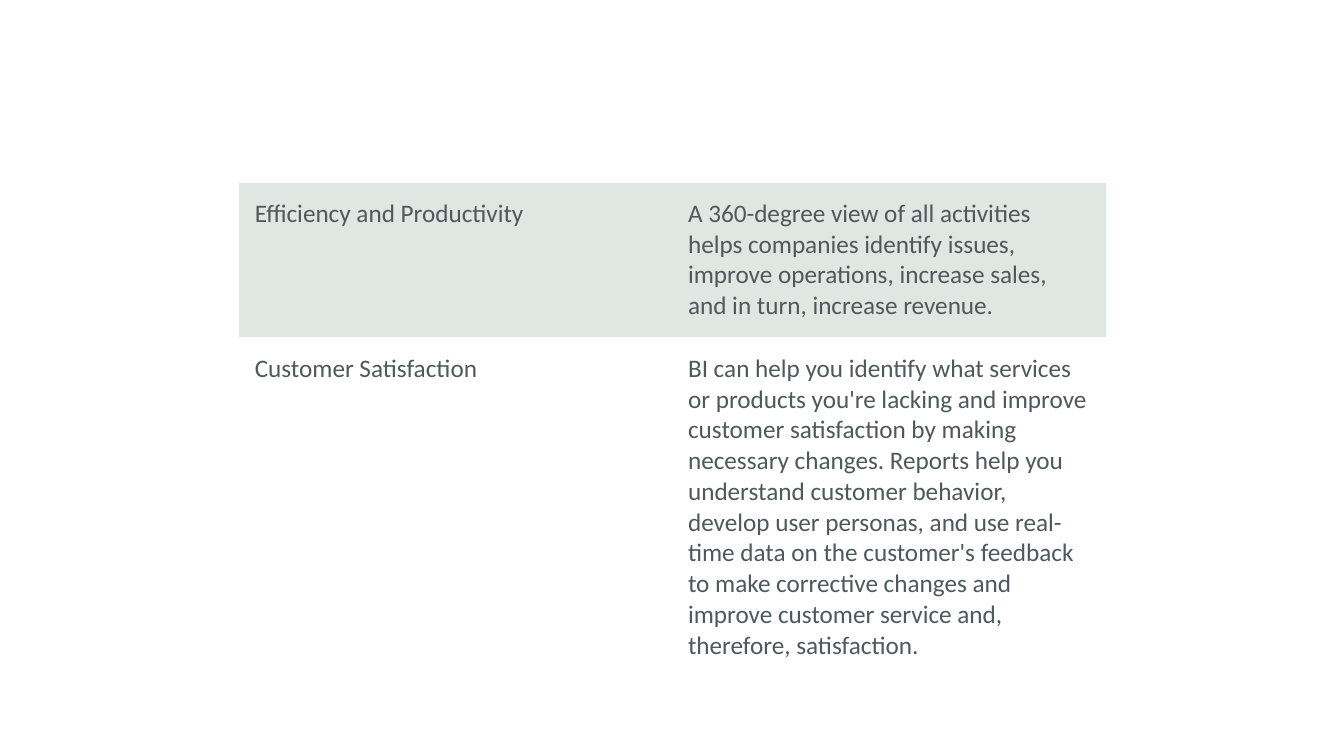
"""Build a slide with a two-row table of business intelligence benefits."""
from dataclasses import dataclass

from lxml.etree import SubElement
from pptx import Presentation
from pptx.dml.color import RGBColor
from pptx.oxml.ns import qn
from pptx.util import Cm, Pt


@dataclass(frozen=True)
class Theme:
    """Colours and type of the slide."""
    font: str = "Calibri"
    body_size: int = 18
    text: str = "4F585B"
    bands: tuple = ("DFE7E3", "FFFFFF")


THEME = Theme()

BENEFITS = [
    ("Efficiency and Productivity",
     "A 360-degree view of all activities helps companies identify issues, "
     "improve operations, increase sales, and in turn, increase revenue."),
    ("Customer Satisfaction",
     "BI can help you identify what services or products you're lacking and "
     "improve customer satisfaction by making necessary changes. Reports help "
     "you understand customer behavior, develop user personas, and use "
     "real-time data on the customer's feedback to make corrective changes and "
     "improve customer service and, therefore, satisfaction."),
]
ROW_HEIGHTS = (Cm(3.88), Cm(8.39))
COLUMN_WIDTH = Cm(10.92)
CELL_MARGIN = Cm(0.4)


def write_text(text_frame, text, *, font=THEME.font, size=THEME.body_size,
               color=THEME.text, bold=False):
    """Put one formatted run of text into a text frame."""
    text_frame.word_wrap = True
    run = text_frame.paragraphs[0].add_run()
    run.text = text
    run.font.name = font
    run.font.size = Pt(size)
    run.font.bold = bold
    run.font.color.rgb = RGBColor.from_string(color)


def clear_borders(cell):
    """Remove the border lines on all four sides of a cell."""
    properties = cell._tc.get_or_add_tcPr()
    for side in ("L", "R", "T", "B"):
        line = SubElement(properties, qn(f"a:ln{side}"), w="0")
        SubElement(line, qn("a:noFill"))


def format_cell(cell, text, band):
    """Fill a cell with its text, margins and band colour."""
    cell.margin_left = cell.margin_right = CELL_MARGIN
    cell.margin_top = cell.margin_bottom = CELL_MARGIN
    clear_borders(cell)
    cell.fill.solid()
    cell.fill.fore_color.rgb = RGBColor.from_string(band)
    write_text(cell.text_frame, text)


def add_benefits_table(slide, left, top):
    """Add the table of benefits, one band colour per row."""
    columns = len(BENEFITS[0])
    table = slide.shapes.add_table(
        len(BENEFITS), columns, left, top,
        COLUMN_WIDTH * columns, sum(ROW_HEIGHTS)).table
    table.first_row = table.horz_banding = False
    for column in table.columns:
        column.width = COLUMN_WIDTH
    for row, height, texts, band in zip(
            table.rows, ROW_HEIGHTS, BENEFITS, THEME.bands):
        row.height = height
        for cell, text in zip(row.cells, texts):
            format_cell(cell, text, band)


def main():
    """Create the presentation and save it."""
    presentation = Presentation()
    presentation.slide_width = Cm(33.87)
    presentation.slide_height = Cm(19.05)
    blank_layout = presentation.slide_layouts[6]
    slide = presentation.slides.add_slide(blank_layout)
    add_benefits_table(slide, Cm(6.02), Cm(4.6))
    presentation.save("out.pptx")


if __name__ == "__main__":
    main()
